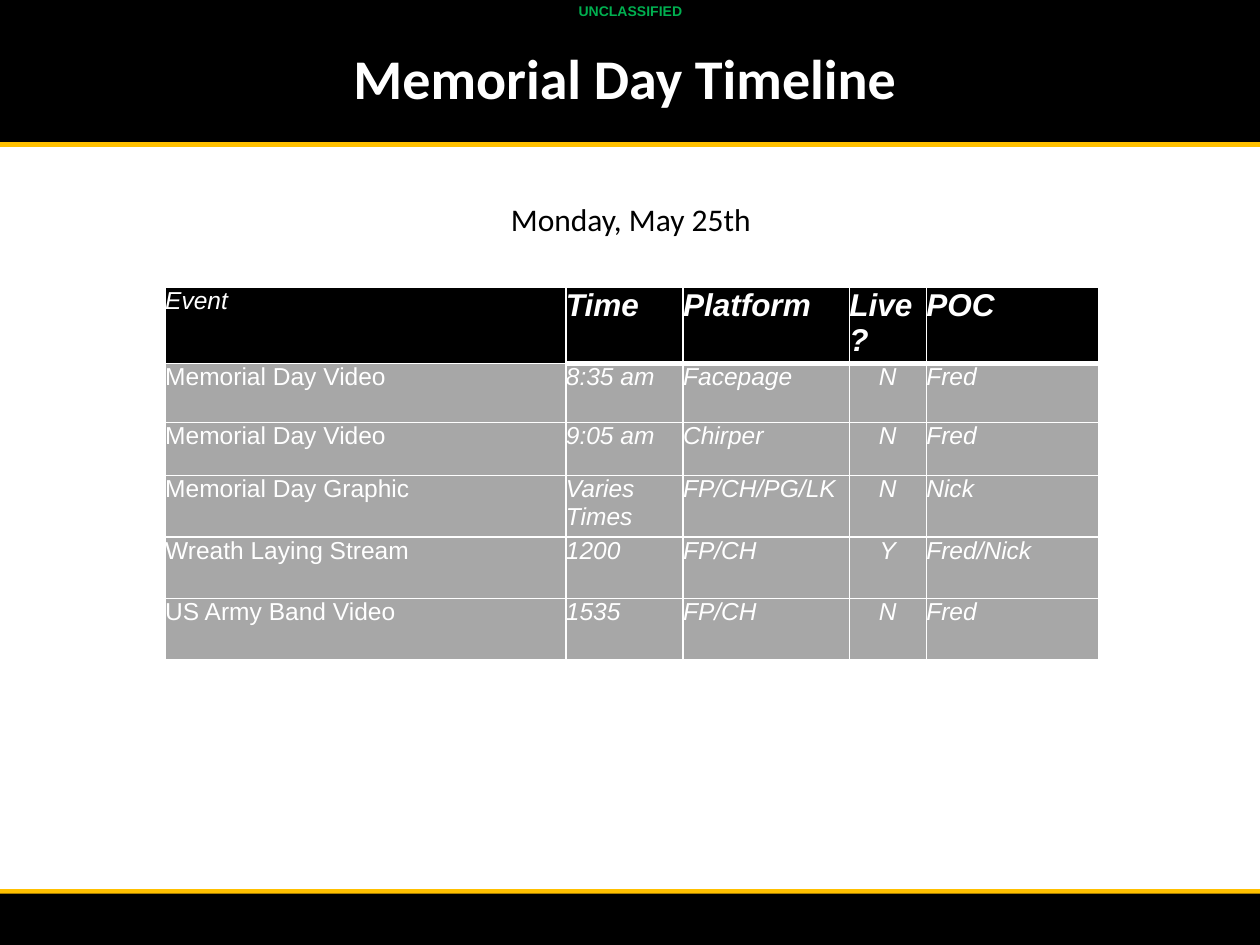
from lxml import etree
from pptx import Presentation
from pptx.dml.color import RGBColor
from pptx.enum.shapes import MSO_CONNECTOR, MSO_SHAPE
from pptx.enum.text import MSO_ANCHOR, PP_ALIGN
from pptx.oxml.ns import qn
from pptx.util import Pt

BLACK = RGBColor(0x00, 0x00, 0x00)
WHITE = RGBColor(0xFF, 0xFF, 0xFF)
GOLD = RGBColor(0xFF, 0xC0, 0x00)
GREEN = RGBColor(0x00, 0xB0, 0x50)
GRAY = RGBColor(0xA7, 0xA7, 0xA7)
CENTER, LEFT = PP_ALIGN.CENTER, PP_ALIGN.LEFT
TOP, MIDDLE = MSO_ANCHOR.TOP, MSO_ANCHOR.MIDDLE
RECT, STRAIGHT = MSO_SHAPE.RECTANGLE, MSO_CONNECTOR.STRAIGHT

WIDTH, HEIGHT = 720, 540
COLS = [229, 67, 95, 44, 98.6]
ROWS = [41.8, 33.8, 30.2, 35.2, 35.2, 35.2]
LIVE = 3
EVENTS = [
    ["Event", "Time", "Platform", "Live?", "POC"],
    ["Memorial Day Video", "8:35 am", "Facepage", "N", "Fred"],
    ["Memorial Day Video", "9:05 am", "Chirper", "N", "Fred"],
    ["Memorial Day Graphic", "Varies Times", "FP/CH/PG/LK", "N", "Nick"],
    ["Wreath Laying Stream", "1200", "FP/CH", "Y", "Fred/Nick"],
    ["US Army Band Video", "1535", "FP/CH", "N", "Fred"],
]


def style(para, face, size, color, bold=False, slant=False):
    font = para.font
    font.name, font.size = face, Pt(size)
    font.bold, font.italic = bold, slant
    font.color.rgb = color


def add_band(slide, top, height):
    band = slide.shapes.add_shape(RECT, 0, Pt(top), Pt(WIDTH), Pt(height))
    band.shadow.inherit = False
    band.fill.solid()
    band.fill.fore_color.rgb = BLACK
    band.line.fill.background()


def add_rule(slide, top):
    rule = slide.shapes.add_connector(STRAIGHT, 0, Pt(top), Pt(WIDTH), Pt(top))
    rule.line.color.rgb = GOLD
    rule.line.width = Pt(3)
    etree.SubElement(rule._element.spPr, qn("a:effectLst"))


def add_text(slide, box, text, face, size, color, bold=False, wrap=False, anchor=TOP):
    frame = slide.shapes.add_textbox(*map(Pt, box)).text_frame
    frame.word_wrap = wrap
    frame.vertical_anchor = anchor
    frame.margin_left = frame.margin_right = Pt(3.6)
    frame.margin_top = frame.margin_bottom = Pt(3.6)
    para = frame.paragraphs[0]
    para.text = text
    para.alignment = CENTER
    style(para, face, size, color, bold)
    return para


def add_edge(cell, side, width):
    props = cell._tc.get_or_add_tcPr()
    edge = etree.SubElement(props, qn("a:ln" + side), w=str(Pt(width)))
    fill = etree.SubElement(edge, qn("a:solidFill"))
    etree.SubElement(fill, qn("a:srgbClr"), val=str(WHITE))


def fill_cell(cell, row, col):
    head = row == 0
    thick = 3 if col else 1
    for side in "LRTB":
        split = (row, side) in ((0, "B"), (1, "T"))
        add_edge(cell, side, thick if split else 1)
    cell.fill.solid()
    cell.fill.fore_color.rgb = BLACK if head else GRAY
    cell.margin_left = cell.margin_right = 0
    cell.margin_top = cell.margin_bottom = 0
    cell.text = EVENTS[row][col]
    para = cell.text_frame.paragraphs[0]
    para.alignment = CENTER if col == LIVE and not head else LEFT
    large = head and col > 0
    style(para, "Arial", 18 if large else 14, WHITE, large, head or col > 0)


def add_events(slide, left, top):
    frame = slide.shapes.add_table(len(ROWS), len(COLS), Pt(left), Pt(top),
                                   Pt(sum(COLS)), Pt(sum(ROWS)))
    table = frame.table
    for col, width in enumerate(COLS):
        table.columns[col].width = Pt(width)
    for row, height in enumerate(ROWS):
        table.rows[row].height = Pt(height)
        for col in range(len(COLS)):
            fill_cell(table.cell(row, col), row, col)


def main():
    deck = Presentation()
    deck.slide_width, deck.slide_height = Pt(WIDTH), Pt(HEIGHT)
    slide = deck.slides.add_slide(deck.slide_layouts[6])
    add_rule(slide, 509.6)
    add_band(slide, 510.6, 29.4)
    add_band(slide, 0, 82.4)
    add_rule(slide, 82.4)
    add_text(slide, (326.8, -2, 67, 16), "UNCLASSIFIED", "Arial", 8, GREEN, bold=True)
    add_events(slide, 94.4, 164.4)
    add_text(slide, (288, 111, 145, 26), "Monday, May 25th", "Calibri", 18, BLACK)
    title = add_text(slide, (58.4, 12, 597.6, 68.4), "Memorial Day Timeline",
                     "Calibri", 32, WHITE, bold=True, wrap=True, anchor=MIDDLE)
    title.line_spacing = 0.9
    deck.save("out.pptx")


if __name__ == "__main__":
    main()
